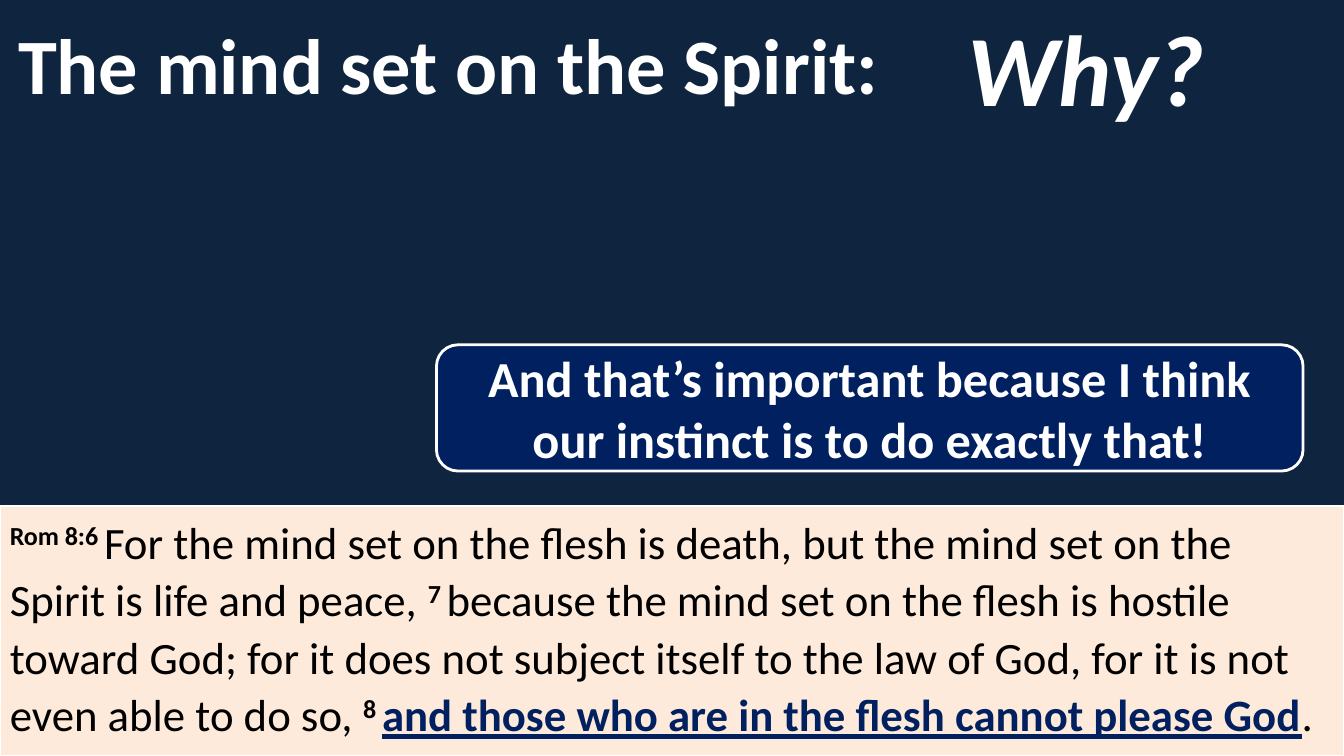
from pptx import Presentation
from pptx.dml.color import RGBColor
from pptx.enum.shapes import MSO_SHAPE
from pptx.enum.text import MSO_ANCHOR, MSO_AUTO_SIZE, PP_ALIGN
from pptx.util import Cm, Pt

COLORS = {
    "back": "0F243E",
    "white": "FFFFFF",
    "black": "000000",
    "peach": "FDEADA",
    "navy": "002060",
}


class Deck:
    """Holds the style and the current slide."""

    font = "Calibri"

    def __init__(self):
        self.prs = Presentation()
        self.prs.slide_width, self.prs.slide_height = Cm(33.87), Cm(19.05)
        self.slide = self.prs.slides.add_slide(self.prs.slide_layouts[5])
        self.paint(self.slide.background.fill, "back")

    def paint(self, fill, color):
        fill.solid()
        fill.fore_color.rgb = RGBColor.from_string(COLORS[color])

    def style(self, run, size, color="white", bold=True, italic=False):
        font = run.font
        font.name, font.size = self.font, Pt(size)
        font.bold, font.italic = bold, italic
        font.color.rgb = RGBColor.from_string(COLORS[color])

    def frame(self, shape, anchor=MSO_ANCHOR.MIDDLE):
        frame = shape.text_frame
        frame.word_wrap = True
        frame.auto_size = MSO_AUTO_SIZE.NONE
        frame.vertical_anchor = anchor
        return frame

    def line(self, shape, text, size, align=PP_ALIGN.LEFT, italic=False):
        frame = self.frame(shape)
        frame.text = text
        para = frame.paragraphs[0]
        para.alignment = align
        self.style(para.runs[0], size, italic=italic)

    def title(self, text, box, size):
        shape = self.slide.shapes.title
        shape.left, shape.top, shape.width, shape.height = map(Cm, box)
        self.line(shape, text, size)

    def label(self, text, box, size):
        shape = self.slide.shapes.add_textbox(*map(Cm, box))
        self.line(shape, text, size, italic=True)

    def panel(self, kind, box, fill, width):
        shape = self.slide.shapes.add_shape(kind, *map(Cm, box))
        shape.shadow.inherit = False
        self.paint(shape.fill, fill)
        self.paint(shape.line.fill, "white")
        shape.line.width = Pt(width)
        return shape

    def callout(self, text, box, size, tip):
        shape = self.panel(MSO_SHAPE.ROUNDED_RECTANGULAR_CALLOUT, box, "navy", 2)
        for i, value in enumerate(tip):
            shape.adjustments[i] = value
        self.line(shape, text, size, PP_ALIGN.CENTER)

    def verse(self, parts, box, size):
        shape = self.panel(MSO_SHAPE.RECTANGLE, box, "peach", 1.5)
        para = self.frame(shape, MSO_ANCHOR.TOP).paragraphs[0]
        para.alignment = PP_ALIGN.LEFT
        para.line_spacing = 1.07
        for kind, text in parts:
            run = para.add_run()
            run.text = text
            key = kind == "key"
            self.style(run, size, "navy" if key else "black", kind != "plain")
            run.font.underline = key
            if kind == "mark":
                run._r.get_or_add_rPr().set("baseline", "30000")


def main():
    deck = Deck()

    # Heading and question
    deck.title("The mind set on the Spirit:", (0.2, -0.08, 22.43, 3.35), 56)

    # Bible passage: verse marks, plain text and key phrase
    deck.verse([
        ("mark", "Rom 8:6 "),
        ("plain", "For the mind set on the flesh is death, but the mind set "
                  "on the Spirit is life and peace, "),
        ("mark", "7 "),
        ("plain", "because the mind set on the flesh is hostile toward God; "
                  "for it does not subject itself to the law of God, "
                  "for it is not even able to do so, "),
        ("mark", "8 "),
        ("key", "and those who are in the flesh cannot please God"),
        ("plain", "."),
    ], (0, 12.75, 33.87, 6.3), 32)

    deck.label("Why?", (24.13, 0, 7.82, 3.35), 72)

    # Remark
    deck.callout("And that’s important because I think our instinct is to do "
                 "exactly that!", (11, 8.69, 21.84, 3.18), 36,
                 (-0.22, 0.5, 0.17))

    deck.prs.save("out.pptx")


if __name__ == "__main__":
    main()
